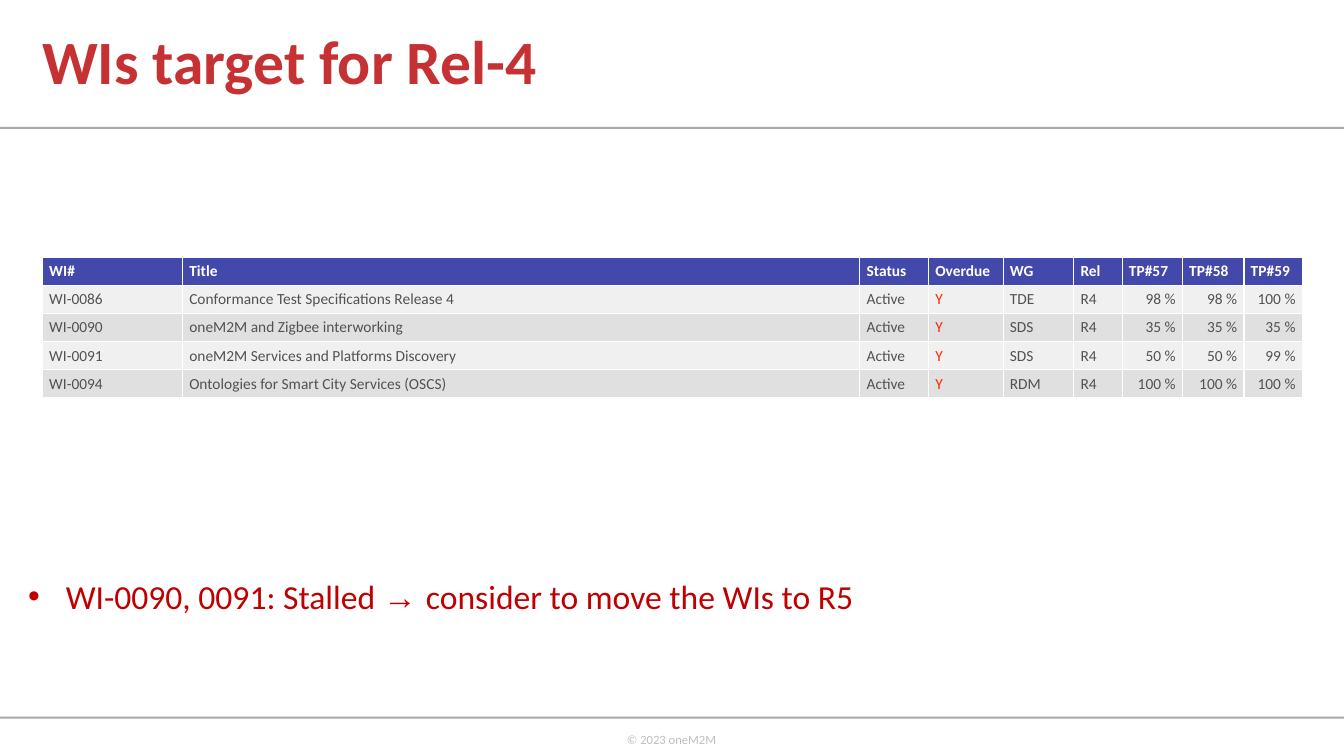
from dataclasses import dataclass

from lxml import etree
from pptx import Presentation
from pptx.dml.color import RGBColor
from pptx.enum.shapes import MSO_SHAPE
from pptx.enum.text import MSO_ANCHOR, PP_ALIGN
from pptx.oxml.ns import qn
from pptx.util import Cm, Pt

RECT = MSO_SHAPE.RECTANGLE
MIDDLE, TOP = MSO_ANCHOR.MIDDLE, MSO_ANCHOR.TOP
LEFT, RIGHT = PP_ALIGN.LEFT, PP_ALIGN.RIGHT


@dataclass(frozen=True)
class Theme:
    """Colours, fonts and type sizes of the slide."""
    face: str = "Calibri"
    symbol: str = "Arial"
    title: str = "C63133"
    note: str = "C00000"
    rule: str = "A7A9AC"
    foot: str = "BFBFBF"
    head: str = "4349AA"
    bands: tuple = ("F0F0F0", "E0E0E0")
    text: str = "545054"
    late: str = "FF2600"
    white: str = "FFFFFF"
    title_size: int = 44
    note_size: int = 24
    cell_size: int = 11
    foot_size: int = 9


THEME = Theme()
WIDTH, HEIGHT = 33.87, 19.05
COLS = (3.53, 17.07, 1.73, 1.88, 1.78, 1.22, 1.52, 1.55, 1.47)
ROW = 0.71
HEADS = ("WI#", "Title", "Status", "Overdue", "WG", "Rel", "TP#57", "TP#58", "TP#59")
ITEMS = (
    ("WI-0086", "Conformance Test Specifications Release 4", "TDE", (98, 98, 100)),
    ("WI-0090", "oneM2M and Zigbee interworking", "SDS", (35, 35, 35)),
    ("WI-0091", "oneM2M Services and Platforms Discovery", "SDS", (50, 50, 99)),
    ("WI-0094", "Ontologies for Smart City Services (OSCS)", "RDM", (100, 100, 100)),
)


def style(font, size, color, bold=False):
    """Set face, size, colour and weight of a font."""
    font.name, font.size, font.bold = THEME.face, Pt(size), bold
    font.color.rgb = RGBColor.from_string(color)


def add_rule(slide, top):
    """Draw a thin grey bar across the slide."""
    bar = slide.shapes.add_shape(RECT, 0, Cm(top), Cm(WIDTH), Cm(0.05))
    bar.shadow.inherit = False
    bar.fill.solid()
    bar.fill.fore_color.rgb = RGBColor.from_string(THEME.rule)
    bar.line.fill.background()


def add_text(slide, box, anchor=TOP, wrap=True):
    """Add an empty text box and return its first paragraph."""
    frame = slide.shapes.add_textbox(*map(Cm, box)).text_frame
    frame.word_wrap, frame.vertical_anchor = wrap, anchor
    frame.margin_left = frame.margin_right = Cm(0.13)
    frame.margin_top = frame.margin_bottom = Cm(0.13)
    return frame.paragraphs[0]


def add_bullet(para, indent):
    """Give a paragraph a round bullet with a hanging indent."""
    props = para._p.get_or_add_pPr()
    props.set("marL", str(Cm(indent)))
    props.set("indent", str(-Cm(indent)))
    etree.SubElement(props, qn("a:buFont"), typeface=THEME.symbol)
    etree.SubElement(props, qn("a:buChar"), char="•")


def add_edges(cell):
    """Draw white lines on the four sides of a cell."""
    props = cell._tc.get_or_add_tcPr()
    for side in ("lnL", "lnR", "lnT", "lnB"):
        line = etree.SubElement(props, qn(f"a:{side}"), w=str(Pt(1)))
        fill = etree.SubElement(line, qn("a:solidFill"))
        etree.SubElement(fill, qn("a:srgbClr"), val=THEME.white)


def fill_cell(cell, text, fill, color, bold=False, align=LEFT):
    """Write and style one table cell."""
    add_edges(cell)
    cell.fill.solid()
    cell.fill.fore_color.rgb = RGBColor.from_string(fill)
    cell.vertical_anchor = MIDDLE
    cell.margin_left = cell.margin_right = Cm(0.17)
    cell.margin_top = cell.margin_bottom = 0
    para = cell.text_frame.paragraphs[0]
    para.text, para.alignment = text, align
    style(para.font, THEME.cell_size, color, bold)


def add_items(slide, left, top):
    """Add the table of work items."""
    count = len(ITEMS) + 1
    table = slide.shapes.add_table(
        count, len(COLS), Cm(left), Cm(top), Cm(sum(COLS)), Cm(ROW * count)).table
    for col, width in zip(table.columns, COLS):
        col.width = Cm(width)
    for row in table.rows:
        row.height = Cm(ROW)
    for col, head in enumerate(HEADS):
        fill_cell(table.cell(0, col), head, THEME.head, THEME.white, bold=True)
    for row, (code, name, group, rates) in enumerate(ITEMS, 1):
        texts = (code, name, "Active", "Y", group, "R4", *(f"{rate} %" for rate in rates))
        fill = THEME.bands[(row - 1) % 2]
        for col, text in enumerate(texts):
            color = THEME.late if HEADS[col] == "Overdue" else THEME.text
            align = RIGHT if HEADS[col].startswith("TP#") else LEFT
            fill_cell(table.cell(row, col), text, fill, color, align=align)


def add_note(slide):
    """Add the bulleted remark below the table."""
    para = add_text(slide, (0.58, 14.38, 28.4, 1.24))
    add_bullet(para, 0.95)
    style(para.font, THEME.note_size, THEME.note)
    parts = (
        ("WI-0090, 0091: Stalled ", THEME.face),
        ("→ ", THEME.symbol),
        ("consider to move the WIs to R5", THEME.face),
    )
    for text, face in parts:
        run = para.add_run()
        run.text, run.font.name = text, face
        run.font.size = Pt(THEME.note_size)
        run.font.color.rgb = RGBColor.from_string(THEME.note)


def main():
    """Build and save the slide."""
    deck = Presentation()
    deck.slide_width, deck.slide_height = Cm(WIDTH), Cm(HEIGHT)
    slide = deck.slides.add_slide(deck.slide_layouts[6])
    for top in (3.2, 18.06):
        add_rule(slide, top)
    foot = add_text(slide, (15.67, 18.31, 2.64, 1.04), wrap=False)
    foot.text = "© 2023 oneM2M"
    style(foot.font, THEME.foot_size, THEME.foot)
    title = add_text(slide, (0.93, 0, 21.82, 3.25), MIDDLE)
    title.text, title.line_spacing = "WIs target for Rel-4", 0.9
    style(title.font, THEME.title_size, THEME.title, bold=True)
    add_note(slide)
    add_items(slide, 1.07, 6.48)
    deck.save("out.pptx")


if __name__ == "__main__":
    main()
